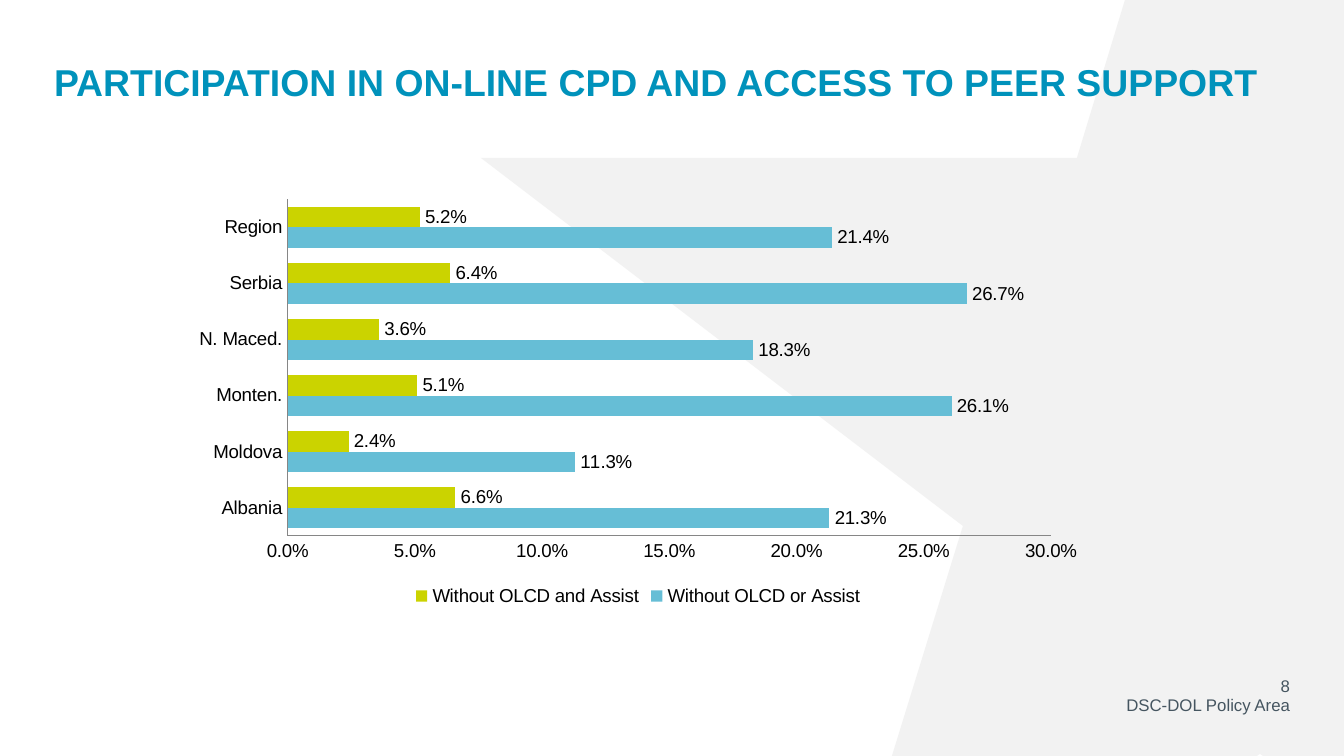
import pptx
import pptx.chart.data
import pptx.dml.color
import pptx.enum.chart
import pptx.enum.text
import pptx.util

COLORS = {
    "title": "0092BB",
    "backdrop": "F2F2F2",
    "footer": "455560",
    "text": "000000",
    "axis": "868686",
    "blue": "66BED6",
    "green": "CBD300",
}
FONT = "Arial"
PERCENT = "###0.0%"
EMU_PER_PX = 914400 / 134.4

TITLE = "PARTICIPATION IN ON-LINE CPD AND ACCESS TO PEER SUPPORT"
CATEGORIES = ["Albania", "Moldova", "Monten.", "N. Maced.", "Serbia", "Region"]
SERIES = [
    ("Without OLCD or Assist", "blue", (0.213, 0.113, 0.261, 0.183, 0.267, 0.214)),
    ("Without OLCD and Assist", "green", (0.066, 0.024, 0.051, 0.036, 0.064, 0.052)),
]
FOOTERS = [
    ("8", (1265, 676, 25, 19)),
    ("DSC-DOL Policy Area", (837, 695, 453, 19)),
]
BACKDROP = [
    (1125, 0), (1344, 0), (1344, 756), (1263, 756), (1260, 754), (1257, 756),
    (892, 756), (963, 526), (481, 158), (1077, 158),
]
TITLE_BOX = (54, 64, 1236, 81)
CHART_BOX = (181, 191, 914, 421)


def px(length):
    return pptx.util.Emu(round(length * EMU_PER_PX))


def rgb(name):
    return pptx.dml.color.RGBColor.from_string(COLORS[name])


def set_all(target, values):
    for name, value in values.items():
        setattr(target, name, value)


def set_font(font, size, color, bold=False):
    set_all(font, {"name": FONT, "size": pptx.util.Pt(size), "bold": bold})
    font.color.rgb = rgb(color)


def fill_frame(frame, text, anchor, align, spacing=1.0):
    """Put one paragraph in a frame without margins and return it."""
    set_all(frame, {
        "margin_left": 0, "margin_top": 0, "margin_right": 0, "margin_bottom": 0,
        "word_wrap": True, "vertical_anchor": anchor, "text": text,
        "auto_size": pptx.enum.text.MSO_AUTO_SIZE.NONE,
    })
    paragraph = frame.paragraphs[0]
    set_all(paragraph, {"alignment": align, "line_spacing": spacing})
    return paragraph


def add_backdrop(slide):
    builder = slide.shapes.build_freeform(*BACKDROP[0], scale=EMU_PER_PX)
    builder.add_line_segments(BACKDROP[1:], close=True)
    shape = builder.convert_to_shape()
    shape.shadow.inherit = False
    shape.fill.solid()
    shape.fill.fore_color.rgb = rgb("backdrop")
    shape.line.fill.background()
    # Behind the title placeholder
    slide.shapes.title.element.addprevious(shape.element)


def add_title(slide):
    title = slide.shapes.title
    set_all(title, dict(zip(("left", "top", "width", "height"), map(px, TITLE_BOX))))
    paragraph = fill_frame(title.text_frame, TITLE, pptx.enum.text.MSO_ANCHOR.TOP,
                           pptx.enum.text.PP_ALIGN.LEFT, 0.9)
    set_font(paragraph.runs[0].font, 20, "title", True)


def add_footers(slide):
    for text, box in FOOTERS:
        frame = slide.shapes.add_textbox(*map(px, box)).text_frame
        paragraph = fill_frame(frame, text, pptx.enum.text.MSO_ANCHOR.MIDDLE,
                               pptx.enum.text.PP_ALIGN.RIGHT)
        set_font(paragraph.runs[0].font, 9, "footer")


def add_bar_chart(slide):
    data = pptx.chart.data.CategoryChartData(number_format=PERCENT)
    data.categories = CATEGORIES
    for name, _, values in SERIES:
        data.add_series(name, values)
    chart = slide.shapes.add_chart(
        pptx.enum.chart.XL_CHART_TYPE.BAR_CLUSTERED, *map(px, CHART_BOX), data).chart
    set_font(chart.font, 10, "text")
    set_all(chart, {"has_title": False, "has_legend": True})
    set_all(chart.legend, {
        "position": pptx.enum.chart.XL_LEGEND_POSITION.BOTTOM,
        "include_in_layout": False,
    })

    for axis in (chart.category_axis, chart.value_axis):
        set_all(axis, {
            "has_major_gridlines": False,
            "major_tick_mark": pptx.enum.chart.XL_TICK_MARK.NONE,
            "minor_tick_mark": pptx.enum.chart.XL_TICK_MARK.NONE,
        })
        axis.format.line.color.rgb = rgb("axis")
        axis.format.line.width = pptx.util.Pt(0.75)
    set_all(chart.value_axis, {"minimum_scale": 0, "maximum_scale": 0.3, "major_unit": 0.05})
    set_all(chart.value_axis.tick_labels,
            {"number_format": PERCENT, "number_format_is_linked": False})

    plot = chart.plots[0]
    set_all(plot, {"gap_width": 75, "overlap": 0, "vary_by_categories": False})
    for series, (_, color, _) in zip(plot.series, SERIES):
        series.format.fill.solid()
        series.format.fill.fore_color.rgb = rgb(color)
        set_all(series.data_labels, {
            "show_value": True,
            "number_format": PERCENT,
            "number_format_is_linked": False,
            "position": pptx.enum.chart.XL_LABEL_POSITION.OUTSIDE_END,
        })
        set_font(series.data_labels.font, 10, "text")


def main():
    presentation = pptx.Presentation()
    set_all(presentation, {"slide_width": px(1344), "slide_height": px(756)})
    slide = presentation.slides.add_slide(presentation.slide_layouts.get_by_name("Title Only"))
    add_backdrop(slide)
    add_title(slide)
    add_footers(slide)
    add_bar_chart(slide)
    presentation.save("out.pptx")


if __name__ == "__main__":
    main()
